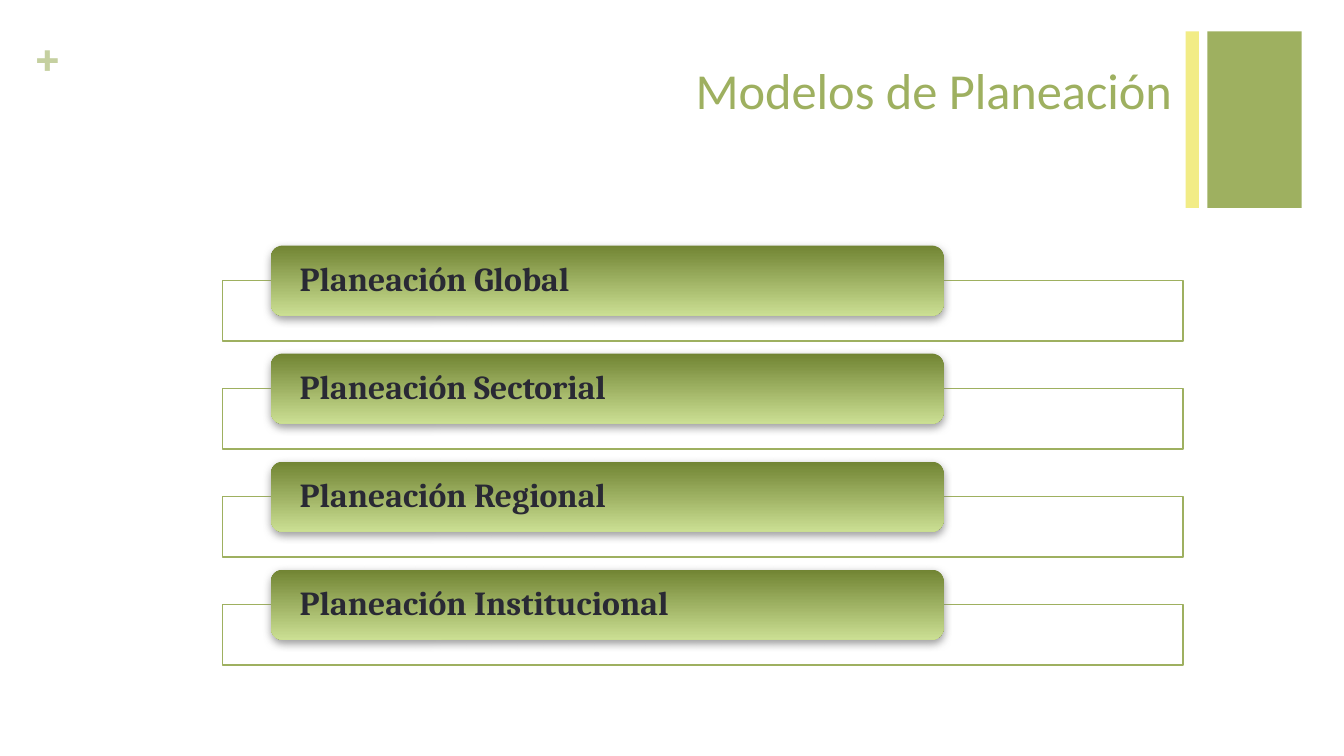
from lxml.etree import SubElement
from pptx import Presentation
from pptx.dml.color import RGBColor
from pptx.enum.shapes import MSO_SHAPE as Form
from pptx.enum.text import MSO_ANCHOR as Anchor, PP_ALIGN as Align
from pptx.oxml.ns import qn
from pptx.util import Inches, Pt

GREEN = "9EB060"
YELLOW = "F2EC86"
MODELS = ["Global", "Sectorial", "Regional", "Institucional"]
TOP, STEP = 2.03, 0.893


def color(code):
    return RGBColor.from_string(code)


class Canvas:
    head = "Calibri"
    body = "Cambria"
    ink = "292934"

    def __init__(self, slide):
        self.slide = slide

    def set_text(self, shape, text, size, font, ink, bold=False,
                 align=Align.LEFT, anchor=Anchor.TOP, pad=(0.1, 0.05)):
        """Put one styled paragraph in a shape; pad is (sides, top and bottom)."""
        frame = shape.text_frame
        frame.word_wrap = True
        frame.vertical_anchor = anchor
        frame.margin_left = frame.margin_right = Inches(pad[0])
        frame.margin_top = frame.margin_bottom = Inches(pad[1])
        para = frame.paragraphs[0]
        para.text = text
        para.alignment = align
        para.font.name = font
        para.font.size = Pt(size)
        para.font.bold = bold
        para.font.color.rgb = color(ink)
        return para

    def label(self, box, text, size, font, ink, **style):
        shape = self.slide.shapes.add_textbox(*map(Inches, box))
        self.set_text(shape, text, size, font, ink, **style)

    def shape(self, form, box):
        shape = self.slide.shapes.add_shape(form, *map(Inches, box))
        shape.shadow.inherit = False
        shape.line.fill.background()
        return shape

    def rect(self, box, fill, line=None):
        shape = self.shape(Form.RECTANGLE, box)
        shape.fill.solid()
        shape.fill.fore_color.rgb = color(fill)
        if line:
            shape.line.color.rgb = color(line)
            shape.line.width = Pt(1)

    def shade(self, shape):
        """Add a soft grey shadow below the shape."""
        effects = shape.element.spPr.find(qn("a:effectLst"))
        shadow = SubElement(effects, qn("a:outerShdw"), blurRad=str(Pt(5)),
                            dist=str(Pt(2)), dir="5400000", rotWithShape="0")
        tint = SubElement(shadow, qn("a:srgbClr"), val="808080")
        SubElement(tint, qn("a:alpha"), val="75000")

    def pill(self, box, text):
        shape = self.shape(Form.ROUNDED_RECTANGLE, box)
        shape.fill.gradient()
        shape.fill.gradient_angle = 270
        for stop, code in zip(shape.fill.gradient_stops, ("718433", "CBDF93")):
            stop.color.rgb = color(code)
        self.shade(shape)
        para = self.set_text(shape, text, 20, self.body, self.ink, bold=True,
                             anchor=Anchor.MIDDLE, pad=(0.21, 0))
        para.line_spacing = 0.9


def main():
    deck = Presentation()
    deck.slide_width, deck.slide_height = Inches(11.11), Inches(6.25)
    art = Canvas(deck.slides.add_slide(deck.slide_layouts[6]))

    art.rect((9.98, 0.26, 0.78, 1.46), GREEN)
    art.label((0.27, 0.21, 0.32, 0.5), "+", 30, art.body, "C5D0A0",
              bold=True, pad=(0, 0))
    art.rect((9.8, 0.26, 0.11, 1.46), YELLOW)
    art.label((0.61, 0.44, 9.18, 1.02), "Modelos de Planeación", 30, art.head,
              GREEN, align=Align.RIGHT)

    for row, model in enumerate(MODELS):
        top = TOP + row * STEP
        art.rect((1.84, top + 0.29, 7.94, 0.5), "FFFFFF", line=GREEN)
        art.pill((2.24, top, 5.56, 0.58), f"Planeación {model}")

    deck.save("out.pptx")


if __name__ == "__main__":
    main()
